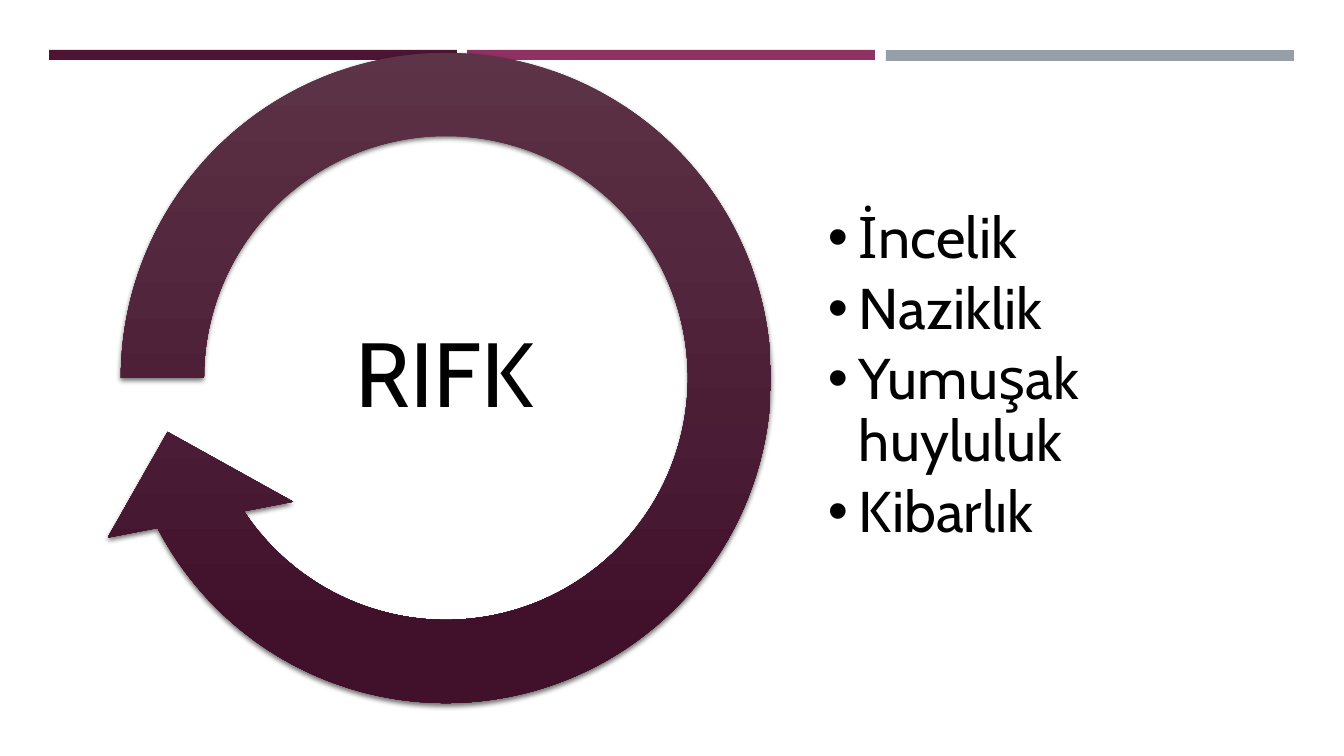
import pptx
import pptx.dml.color
import pptx.enum.shapes
import pptx.enum.text
import pptx.oxml
import pptx.oxml.ns
import pptx.util

RGB = pptx.dml.color.RGBColor
SHAPE = pptx.enum.shapes.MSO_SHAPE
ALIGN = pptx.enum.text.PP_ALIGN

PLUM = RGB(0x4D, 0x14, 0x34)
MAGENTA = RGB(0x90, 0x31, 0x63)
GREY = RGB(0x96, 0x9F, 0xA7)
ARROW_TOP = RGB(0x5F, 0x36, 0x49)
ARROW_BOTTOM = RGB(0x41, 0x11, 0x2C)
BLACK = RGB(0, 0, 0)

SLIDE_WIDTH, SLIDE_HEIGHT = 1344, 756
EMU_PER_PX = 12192000 / SLIDE_WIDTH


def px(length):
    return pptx.util.Emu(round(length * EMU_PER_PX))


class SlideBuilder:
    font_name = "Cabin"
    text_color = BLACK
    line_spacing = 0.9

    def __init__(self, slide):
        self.slide = slide

    def shape(self, kind, left, top, width, height):
        shape = self.slide.shapes.add_shape(kind, px(left), px(top), px(width), px(height))
        shape.line.fill.background()
        shape.shadow.inherit = False
        return shape

    def bar(self, left, top, width, height, color):
        bar = self.shape(SHAPE.RECTANGLE, left, top, width, height)
        bar.fill.solid()
        bar.fill.fore_color.rgb = color

    def circular_arrow(self, left, top, size, adjustments, stops):
        arrow = self.shape(SHAPE.CIRCULAR_ARROW, left, top, size, size)
        for index, value in enumerate(adjustments):
            arrow.adjustments[index] = value
        arrow.fill.gradient()
        arrow.fill.gradient_angle = 270
        for stop, (position, color) in zip(arrow.fill.gradient_stops, stops):
            stop.position = position
            stop.color.rgb = color
        effects = arrow.element.spPr.find(pptx.oxml.ns.qn("a:effectLst"))
        effects.append(pptx.oxml.parse_xml(
            f'<a:outerShdw {pptx.oxml.ns.nsdecls("a")} blurRad="38100" dist="25400" '
            'dir="5400000" rotWithShape="0"><a:srgbClr val="000000">'
            '<a:alpha val="55000"/></a:srgbClr></a:outerShdw>'))

    def fill_placeholder(self, holder, box, lines, size, inset, align, space_after):
        holder.left, holder.top, holder.width, holder.height = map(px, box)
        frame = holder.text_frame
        frame.text = "\n".join(lines)
        frame.word_wrap = True
        frame.auto_size = pptx.enum.text.MSO_AUTO_SIZE.NONE
        frame.vertical_anchor = pptx.enum.text.MSO_ANCHOR.MIDDLE
        frame.margin_left = frame.margin_right = px(inset)
        frame.margin_top = frame.margin_bottom = px(inset)
        for paragraph in frame.paragraphs:
            paragraph.alignment = align
            paragraph.line_spacing = self.line_spacing
            paragraph.space_before = pptx.util.Pt(0)
            paragraph.space_after = pptx.util.Pt(space_after)
            paragraph.font.name = self.font_name
            paragraph.font.size = pptx.util.Pt(size)
            paragraph.font.color.rgb = self.text_color
        return frame

    def title(self, box, text, size):
        self.fill_placeholder(self.slide.shapes.title, box, [text], size, 5, ALIGN.CENTER, 23)

    def bullets(self, box, lines, size, indent):
        frame = self.fill_placeholder(
            self.slide.placeholders[1], box, lines, size, 4, ALIGN.LEFT, 6)
        for paragraph in frame.paragraphs:
            properties = paragraph._p.get_or_add_pPr()
            properties.set("marL", str(px(indent)))
            properties.set("indent", str(-px(indent)))
            properties.append(pptx.oxml.parse_xml(
                f'<a:buChar {pptx.oxml.ns.nsdecls("a")} char="•"/>'))
            default_run = properties.find(pptx.oxml.ns.qn("a:defRPr"))
            if default_run is not None:
                properties.append(default_run)


def main():
    deck = pptx.Presentation()
    deck.slide_width = px(SLIDE_WIDTH)
    deck.slide_height = px(SLIDE_HEIGHT)
    builder = SlideBuilder(deck.slides.add_slide(deck.slide_layouts[1]))

    for column, (color, height) in enumerate([(PLUM, 10), (MAGENTA, 10), (GREY, 11)]):
        builder.bar(49 + column * 837 // 2, 50, 408, height, color)

    builder.circular_arrow(68, 0, SLIDE_HEIGHT, [0.11, 11.42, 90, 108, 0.125],
                           [(0, ARROW_TOP), (0.84, ARROW_BOTTOM)])
    builder.title((234, 273, 421, 211), "RIFK", 65)
    builder.bullets((824, 226, 454, 302),
                    ["İncelik", "Naziklik", "Yumuşak huyluluk", "Kibarlık"], 41, 31)

    deck.save("out.pptx")


if __name__ == "__main__":
    main()
